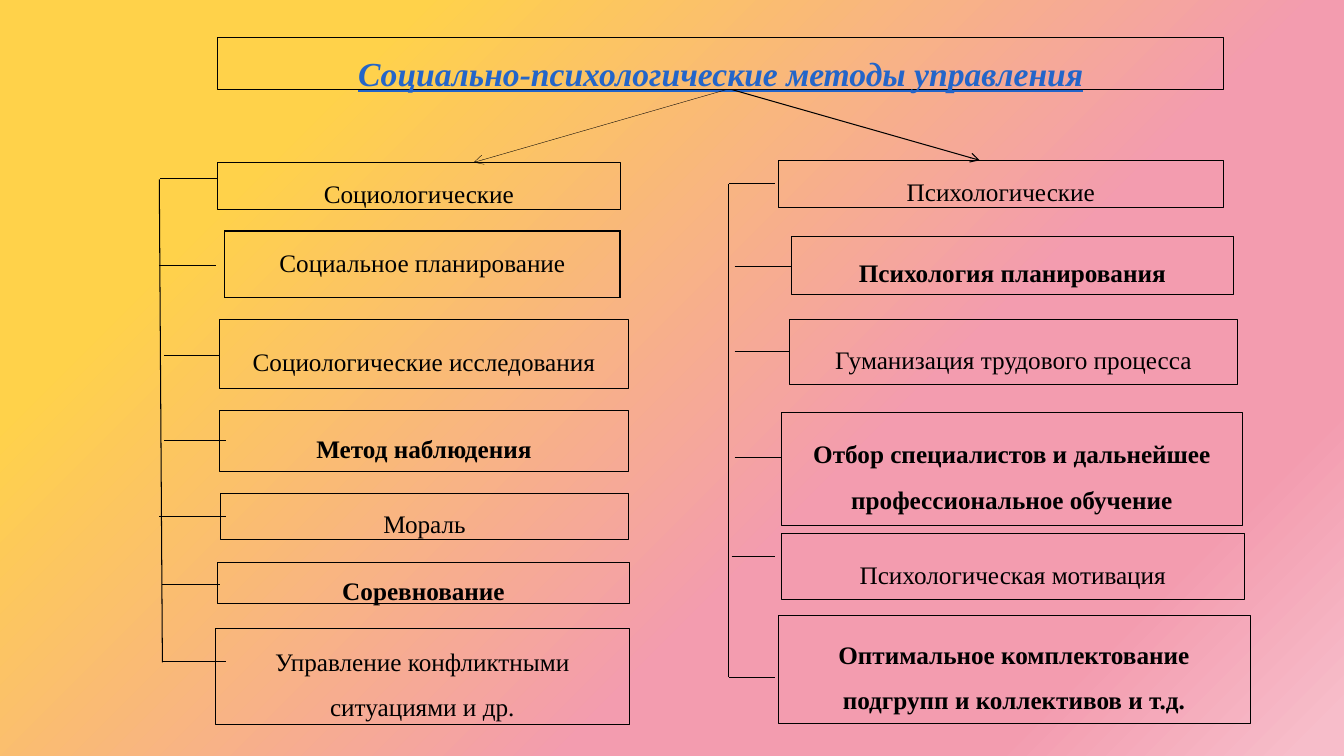
from copy import deepcopy

from pptx import Presentation
from pptx.dml.color import RGBColor
from pptx.enum.shapes import MSO_CONNECTOR, MSO_SHAPE
from pptx.enum.text import MSO_ANCHOR, MSO_AUTO_SIZE, PP_ALIGN
from pptx.oxml import parse_xml
from pptx.oxml.ns import nsdecls, qn
from pptx.util import Pt

RECTANGLE = MSO_SHAPE.RECTANGLE
STRAIGHT = MSO_CONNECTOR.STRAIGHT
MIDDLE = MSO_ANCHOR.MIDDLE
CENTER = PP_ALIGN.CENTER
NO_FIT = MSO_AUTO_SIZE.NONE

BLACK = "000000"
BACKGROUND_STOPS = [(0.2, "FFD24A"), (0.63, "F39CAF"), (0.83, "F39CAF"), (0.98, "F7BDCA")]
METHOD_FONT = {"name": "Times New Roman", "size": Pt(18), "bold": False}
TITLE_FONT = {"name": "Times New Roman", "size": Pt(24), "bold": True, "italic": True, "underline": True}
FRAME_FORMAT = {"word_wrap": True, "auto_size": NO_FIT, "vertical_anchor": MIDDLE}

TITLE_BOX = (155.5, 26.6, 718.6, 37.4)
TITLE_ARROWS = [((363.5, 37.4), (182.9, 89.4), 0.25), ((367.2, 37.4), (544.3, 87.9), 0.75)]

SOCIOLOGICAL = {
    "origin": (113.8, 116),
    "trunk": ((0, 12.2), (2.2, 357.1)),
    "methods": [
        ((41.8, 0, 287.3, 33.8), "Социологические", False),
        ((43.2, 112.3, 291.6, 49), "Социологические исследования", False),
        ((43.2, 177.1, 291.6, 43.9), "Метод наблюдения", True),
        ((43.6, 236.2, 291.6, 33.1), "Мораль", False),
        ((41.8, 285.8, 293.8, 29.5), "Соревнование", True),
        ((40.3, 332.6, 295.2, 69.1), "Управление конфликтными ситуациями и др.", False),
    ],
    "ticks": [(0.7, 41.8, 11.5), (0, 40.3, 73.4), (3.6, 43.2, 138.2), (3.6, 47.5, 198.7),
              (0, 47.5, 252.7), (2.2, 43.2, 301.7), (2.2, 47.5, 356.4)],
}
PLANNING_BOX = (160.6, 165, 282.2, 47.5)

PSYCHOLOGICAL = {
    "origin": (520.5, 114.5),
    "trunk": ((0, 17.3), (0, 369.4)),
    "methods": [
        ((35.3, 0, 318.2, 33.8), "Психологические", False),
        ((44.6, 54, 316.1, 41.8), "Психология планирования", True),
        ((43.2, 113.8, 320.4, 46.1), "Гуманизация трудового процесса", False),
        ((37.4, 180, 329.8, 80.6), "Отбор специалистов и дальнейшее профессиональное обучение", True),
        ((37.4, 266.4, 331.2, 47.5), "Психологическая мотивация", False),
        ((35.3, 324.7, 337, 77.8), "Оптимальное комплектование подгрупп и коллективов и т.д.", True),
    ],
    "ticks": [(0, 33.1, 16.6), (4.3, 45.4, 75.6), (4.3, 43.2, 136.8), (4.3, 37.4, 212.4),
              (2.2, 33.1, 283), (0, 33.1, 369.4)],
}


def rgb(code):
    return RGBColor.from_string(code)


def set_values(target, values):
    for key, value in values.items():
        setattr(target, key, value)


def write(frame, wording, font, color=BLACK, spacing=1.5):
    paragraph = frame.paragraphs[0]
    set_values(paragraph, {"alignment": CENTER, "line_spacing": spacing})
    run = paragraph.add_run()
    run.text = wording
    set_values(run.font, font)
    run.font.color.rgb = rgb(color)


def outline(box, width):
    box.line.color.rgb = rgb(BLACK)
    box.line.width = Pt(width)


def draw_line(slide, origin, start, end, width=0.75, arrow=False):
    left, top = origin
    points = (left + start[0], top + start[1], left + end[0], top + end[1])
    line = slide.shapes.add_connector(STRAIGHT, *map(Pt, points))
    outline(line, width)
    properties = line.element.spPr
    if arrow:
        properties.find(qn("a:ln")).append(parse_xml(f'<a:tailEnd {nsdecls("a")} type="arrow"/>'))
    properties.append(parse_xml(f'<a:effectLst {nsdecls("a")}/>'))


def paint_background(slide):
    fill = slide.background.fill
    fill.gradient()
    fill.gradient_angle = 315
    stop_list = slide.element.find(".//" + qn("a:gsLst"))
    while len(stop_list) < len(BACKGROUND_STOPS):
        stop_list.append(deepcopy(stop_list[0]))
    for stop, (position, color) in zip(fill.gradient_stops, BACKGROUND_STOPS):
        stop.position = position
        stop.color.rgb = rgb(color)


def add_heading(slide, box):
    heading = slide.shapes.title
    set_values(heading, dict(zip(("left", "top", "width", "height"), map(Pt, box))))
    outline(heading, 0.5)
    set_values(heading.text_frame, FRAME_FORMAT)
    write(heading.text_frame, "Социально-психологические методы управления", TITLE_FONT, "2365C9")
    for start, end, width in TITLE_ARROWS:
        draw_line(slide, box[:2], start, end, width, arrow=True)


def add_branch(slide, origin, trunk, methods, ticks):
    for (dx, dy, width, height), wording, bold in methods:
        place = (origin[0] + dx, origin[1] + dy, width, height)
        method = slide.shapes.add_shape(RECTANGLE, *map(Pt, place))
        method.shadow.inherit = False
        method.fill.background()
        outline(method, 0.5)
        set_values(method.text_frame, FRAME_FORMAT)
        write(method.text_frame, wording, METHOD_FONT | {"bold": bold})
    draw_line(slide, origin, *trunk)
    for start, end, level in ticks:
        draw_line(slide, origin, (start, level), (end, level))


def add_planning(slide, box):
    planning = slide.shapes.add_table(1, 1, *map(Pt, box)).table
    set_values(planning, {"first_row": False, "horz_banding": False})
    cell = planning.cell(0, 0)
    cell.vertical_anchor = MIDDLE
    write(cell.text_frame, "Социальное планирование", METHOD_FONT, spacing=1.0)
    properties = cell._tc.get_or_add_tcPr()
    for side in ("lnL", "lnR", "lnT", "lnB"):
        properties.append(parse_xml(
            f'<a:{side} {nsdecls("a")} w="{Pt(1)}"><a:solidFill>'
            f'<a:srgbClr val="{BLACK}"/></a:solidFill></a:{side}>'))
    cell.fill.background()


def main():
    deck = Presentation()
    set_values(deck, {"slide_width": Pt(960), "slide_height": Pt(540)})
    slide = deck.slides.add_slide(deck.slide_layouts[5])
    paint_background(slide)
    add_heading(slide, TITLE_BOX)
    for branch in (PSYCHOLOGICAL, SOCIOLOGICAL):
        add_branch(slide, **branch)
    add_planning(slide, PLANNING_BOX)
    deck.save("out.pptx")


if __name__ == "__main__":
    main()
